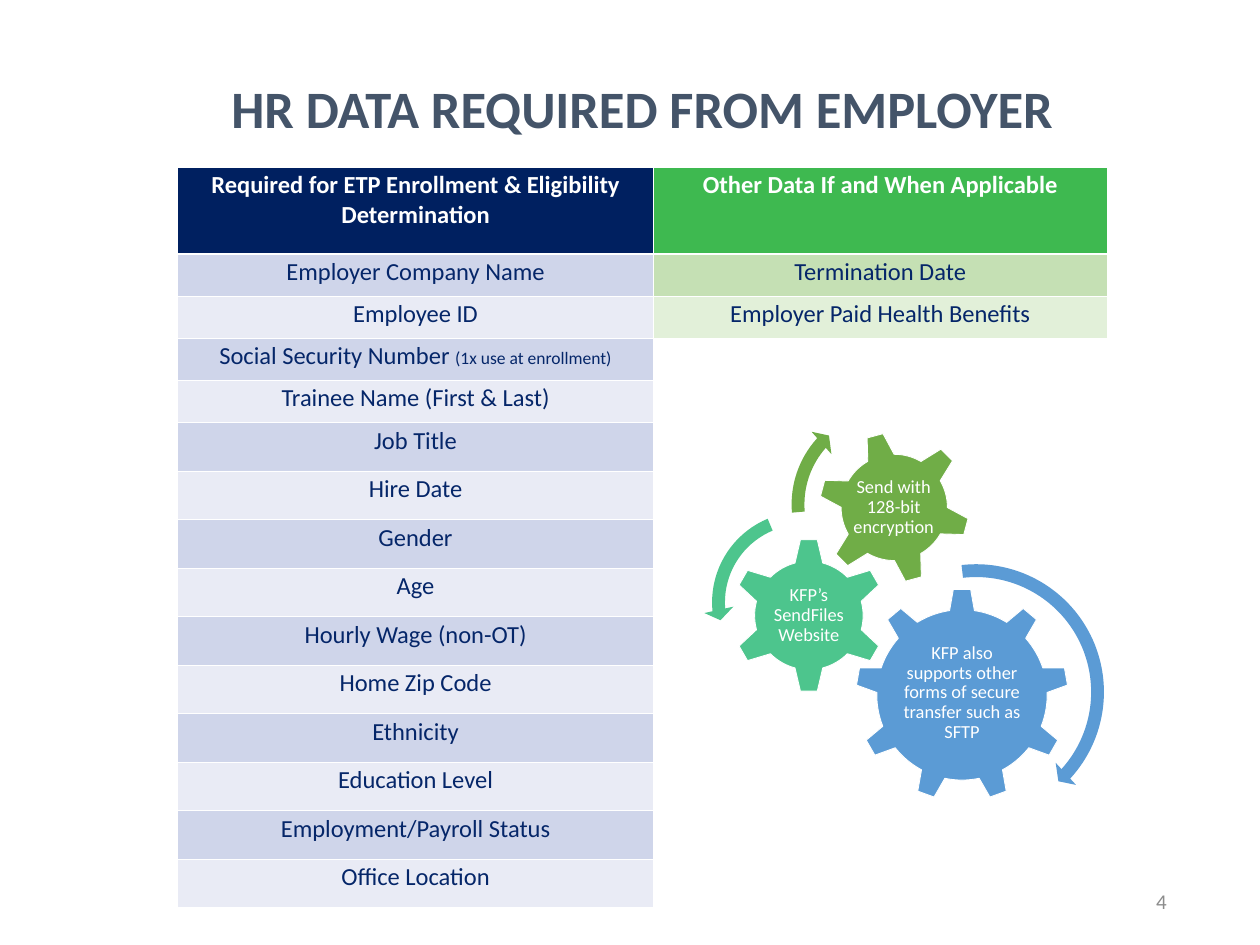
from dataclasses import dataclass

from lxml import etree
from pptx import Presentation
from pptx.dml.color import RGBColor
from pptx.enum.shapes import MSO_SHAPE
from pptx.enum.text import MSO_ANCHOR, MSO_AUTO_SIZE, PP_ALIGN
from pptx.oxml.ns import qn
from pptx.util import Inches, Pt

CENTER, RIGHT = PP_ALIGN.CENTER, PP_ALIGN.RIGHT
MIDDLE = MSO_ANCHOR.MIDDLE
NO_AUTOFIT = MSO_AUTO_SIZE.NONE
GEAR_6, GEAR_9 = MSO_SHAPE.GEAR_6, MSO_SHAPE.GEAR_9
CLOCKWISE, COUNTERCLOCKWISE = MSO_SHAPE.CIRCULAR_ARROW, MSO_SHAPE.LEFT_CIRCULAR_ARROW

TITLE_ONLY_LAYOUT = 5
FONT = "Calibri"
WHITE, NAVY, GREEN, CELL_TEXT = "FFFFFF", "002060", "3EB950", "052669"
BLUE_BANDS = ("CFD5EA", "E9EBF5")
GREEN_BANDS = ("C5E0B4", "E2F0D9")
SKY, MINT, LEAF = "5B9BD5", "4DC58D", "70AD47"

HEADERS = (
    ("Required for ETP Enrollment & Eligibility Determination", NAVY),
    ("Other Data If and When Applicable", GREEN),
)
REQUIRED_DATA = (
    "Employer Company Name", "Employee ID", "Social Security Number ",
    "Trainee Name (First & Last)", "Job Title", "Hire Date", "Gender", "Age",
    "Hourly Wage (non-OT)", "Home Zip Code", "Ethnicity", "Education Level",
    "Employment/Payroll Status", "Office Location",
)
OTHER_DATA = ("Termination Date", "Employer Paid Health Benefits")
SECURITY_NUMBER_ROW = 3
COLUMN_WIDTHS = (7.55, 7.2)
ROW_HEIGHTS = (1.38,) + (0.67,) * 4 + (0.77,) * 10


@dataclass
class Gear:
    preset: int
    left: float
    top: float
    size: float
    color: str
    text: str
    text_box: tuple[float, float, float, float]
    rotation: float = 0


@dataclass
class CurvedArrow:
    preset: int
    left: float
    top: float
    size: float
    color: str
    adjustments: tuple[float, ...]


GEARS = (
    Gear(GEAR_9, 13.58, 9.34, 3.38, SKY,
         "KFP also supports other forms of secure transfer such as SFTP",
         (14.26, 10.13, 2.02, 1.74)),
    Gear(GEAR_6, 11.61, 8.54, 2.46, MINT, "KFP’s SendFiles Website",
         (12.23, 9.17, 1.22, 1.21)),
    Gear(GEAR_6, 12.99, 6.85, 2.41, LEAF, "Send with 128-bit encryption",
         (13.51, 7.38, 1.35, 1.35), 345),
)
ARROWS = (
    CurvedArrow(CLOCKWISE, 13.33, 8.82, 4.33, SKY,
                (0.047, 2.99, 25.422, 158.063, 0.055)),
    CurvedArrow(COUNTERCLOCKWISE, 11.17, 7.99, 3.14, MINT,
                (0.065, 4.3, 104.891, 148.378, 0.075)),
    CurvedArrow(CLOCKWISE, 12.43, 6.31, 3.39, LEAF,
                (0.06, 3.941, 133.138, 105.082, 0.07)),
)


def rgb(color: str) -> RGBColor:
    return RGBColor.from_string(color)


def write(paragraph, text: str, *, size: float, color: str, bold: bool = False,
          align=CENTER, line_spacing: float | None = None) -> None:
    paragraph.alignment = align
    if line_spacing:
        paragraph.line_spacing = line_spacing
    run = paragraph.add_run()
    run.text = text
    run.font.name = FONT
    run.font.size = Pt(size)
    run.font.bold = bold
    run.font.color.rgb = rgb(color)


def add_text_box(slide, box: tuple[float, float, float, float], text: str, *,
                 inset: float, **text_format) -> None:
    frame = slide.shapes.add_textbox(*map(Inches, box)).text_frame
    frame.word_wrap = True
    frame.vertical_anchor = MIDDLE
    frame.margin_left = frame.margin_right = Inches(inset)
    frame.margin_top = frame.margin_bottom = Inches(inset)
    write(frame.paragraphs[0], text, **text_format)


def style_cell(cell, fill: str, top: float = 1, bottom: float = 1) -> None:
    properties = cell._tc.get_or_add_tcPr()
    for side, width in (("L", 1), ("R", 1), ("T", top), ("B", bottom)):
        border = etree.SubElement(properties, qn(f"a:ln{side}"), w=str(Pt(width)))
        solid = etree.SubElement(border, qn("a:solidFill"))
        etree.SubElement(solid, qn("a:srgbClr"), val=WHITE)
    cell.fill.solid()
    cell.fill.fore_color.rgb = rgb(fill)


def add_data_table(slide) -> None:
    table = slide.shapes.add_table(
        len(ROW_HEIGHTS), len(COLUMN_WIDTHS), Inches(2.82), Inches(2.65),
        Inches(sum(COLUMN_WIDTHS)), Inches(sum(ROW_HEIGHTS))).table
    for column, width in zip(table.columns, COLUMN_WIDTHS):
        column.width = Inches(width)
    for row, height in zip(table.rows, ROW_HEIGHTS):
        row.height = Inches(height)

    for column, (header, fill) in enumerate(HEADERS):
        cell = table.cell(0, column)
        style_cell(cell, fill, bottom=3)
        write(cell.text_frame.paragraphs[0], header, size=28, color=WHITE, bold=True)

    for column, (labels, bands) in enumerate(
            ((REQUIRED_DATA, BLUE_BANDS), (OTHER_DATA, GREEN_BANDS))):
        for row, label in enumerate(labels, start=1):
            cell = table.cell(row, column)
            style_cell(cell, bands[(row - 1) % 2], top=3 if row == 1 else 1)
            write(cell.text_frame.paragraphs[0], label, size=28, color=CELL_TEXT)

    security_cell = table.cell(SECURITY_NUMBER_ROW, 0)
    write(security_cell.text_frame.paragraphs[0], "(1x use at enrollment)",
          size=20, color=CELL_TEXT)

    blank_cell = table.cell(len(OTHER_DATA) + 1, 1)
    blank_cell.merge(table.cell(len(ROW_HEIGHTS) - 1, 1))
    style_cell(blank_cell, WHITE)


def add_filled_shape(slide, item: Gear | CurvedArrow):
    shape = slide.shapes.add_shape(
        item.preset, Inches(item.left), Inches(item.top),
        Inches(item.size), Inches(item.size))
    shape.shadow.inherit = False
    shape.fill.solid()
    shape.fill.fore_color.rgb = rgb(item.color)
    return shape


def add_gear(slide, gear: Gear) -> None:
    shape = add_filled_shape(slide, gear)
    shape.rotation = gear.rotation
    shape.line.color.rgb = rgb(WHITE)
    shape.line.width = Pt(1)
    add_text_box(slide, gear.text_box, gear.text, inset=0.03, size=21,
                 color=WHITE, line_spacing=0.9)


def add_curved_arrow(slide, arrow: CurvedArrow) -> None:
    shape = add_filled_shape(slide, arrow)
    shape.line.fill.background()
    for index, value in enumerate(arrow.adjustments):
        shape.adjustments[index] = value


def add_title(slide) -> None:
    title = slide.shapes.title
    title.left, title.top = Inches(1.57), Inches(0.32)
    title.width, title.height = Inches(17.25), Inches(2.9)
    title.text_frame.auto_size = NO_AUTOFIT
    title.text_frame.vertical_anchor = MIDDLE
    write(title.text_frame.paragraphs[0], "HR DATA REQUIRED FROM EMPLOYER",
          size=60, color="445469", bold=True, line_spacing=0.9)


def main() -> None:
    presentation = Presentation()
    presentation.slide_width, presentation.slide_height = Inches(20), Inches(15)
    slide = presentation.slides.add_slide(presentation.slide_layouts[TITLE_ONLY_LAYOUT])
    add_title(slide)
    add_data_table(slide)
    add_text_box(slide, (14.12, 13.9, 4.5, 0.8), "4", inset=0.1, size=24,
                 color="8C8C8C", align=RIGHT)
    for gear in GEARS:
        add_gear(slide, gear)
    for arrow in ARROWS:
        add_curved_arrow(slide, arrow)
    presentation.save("out.pptx")


if __name__ == "__main__":
    main()
